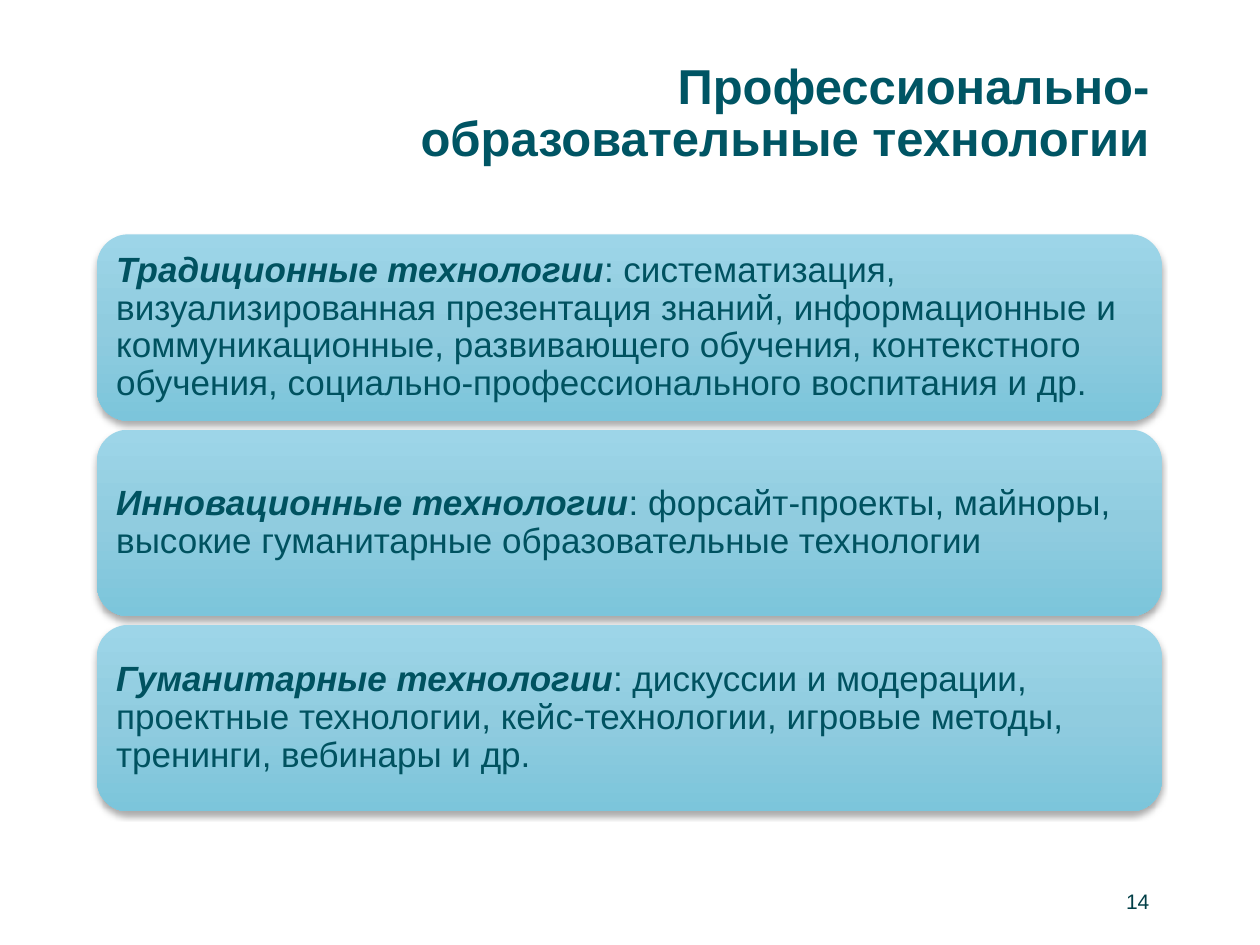
import copy

import pptx
import pptx.dml.color
import pptx.enum.shapes
import pptx.enum.text
import pptx.oxml
import pptx.oxml.ns
import pptx.util

TITLE = "Профессионально-образовательные технологии"
PAGE = "14"
CARDS = [
    ("Традиционные технологии",
     ": систематизация, визуализированная презентация знаний, информационные и "
     "коммуникационные, развивающего обучения, контекстного обучения, "
     "социально-профессионального воспитания и др."),
    ("Инновационные технологии",
     ": форсайт-проекты, майноры, высокие гуманитарные образовательные технологии"),
    ("Гуманитарные технологии",
     ": дискуссии и модерации, проектные технологии, кейс-технологии, "
     "игровые методы, тренинги, вебинары и др."),
]

COLORS = {"title": "005564", "card": "005260", "page": "023F47", "shadow": "000000"}
GRADIENT = [(0, "9DD5E8"), (0.5, "90CCDF"), (1, "7CC5DB")]

WIDTH, HEIGHT = 10, 7.5
LEFT, RIGHT = 0.77, 9.22
CARD_TOP, CARD_HEIGHT, CARD_PITCH = 1.86, 1.48, 1.55
CARD_INSET = 0.08
TITLE_LEFT, TITLE_TOP, TITLE_HEIGHT = 2.42, 0.44, 1.45
PAGE_WIDTH, PAGE_HEIGHT, PAGE_TOP = 0.55, 0.4, 6.95

ALIGN = pptx.enum.text.PP_ALIGN
ANCHOR = pptx.enum.text.MSO_ANCHOR
qn = pptx.oxml.ns.qn
SHADOW = (
    f'<a:outerShdw {pptx.oxml.ns.nsdecls("a")} blurRad="{pptx.util.Pt(3.5)}" '
    f'dist="{pptx.util.Pt(2.2)}" dir="5400000" rotWithShape="0">'
    f'<a:srgbClr val="{COLORS["shadow"]}"><a:alpha val="32000"/></a:srgbClr>'
    '</a:outerShdw>'
)


def inches(*values):
    return [pptx.util.Inches(v) for v in values]


def rgb(value):
    return pptx.dml.color.RGBColor.from_string(value)


def write(sp, runs, color, size, align, anchor, spacing=1.0):
    """Fill one paragraph with (text, font format) runs."""
    tf = sp.text_frame
    tf.word_wrap = True
    tf.vertical_anchor = anchor
    p = tf.paragraphs[0]
    p.alignment = align
    p.line_spacing = spacing
    for text, extra in runs:
        r = p.add_run()
        r.text = text
        for key, value in {"name": "Arial", "size": pptx.util.Pt(size), **extra}.items():
            setattr(r.font, key, value)
        r.font.color.rgb = rgb(COLORS[color])


def add_card(s, top):
    sp = s.shapes.add_shape(pptx.enum.shapes.MSO_SHAPE.ROUNDED_RECTANGLE,
                            *inches(LEFT, top, RIGHT - LEFT, CARD_HEIGHT))
    sp.line.fill.background()
    sp.fill.gradient()
    sp.fill.gradient_angle = 270
    spPr = sp.element.spPr
    stops = spPr.find(qn("a:gradFill")).find(qn("a:gsLst"))
    stops.insert(1, copy.deepcopy(stops[0]))
    for stop, (position, color) in zip(sp.fill.gradient_stops, GRADIENT):
        stop.position = position
        stop.color.rgb = rgb(color)
    sp.shadow.inherit = False
    spPr.find(qn("a:effectLst")).append(pptx.oxml.parse_xml(SHADOW))
    for side in ("left", "top", "right", "bottom"):
        setattr(sp.text_frame, f"margin_{side}", pptx.util.Inches(CARD_INSET))
    return sp


def main():
    prs = pptx.Presentation()
    prs.slide_width, prs.slide_height = inches(WIDTH, HEIGHT)
    s = prs.slides.add_slide(prs.slide_layouts[6])

    title = s.shapes.add_textbox(
        *inches(TITLE_LEFT, TITLE_TOP, RIGHT - TITLE_LEFT, TITLE_HEIGHT))
    write(title, [(TITLE, {"bold": True})], "title", 28, ALIGN.RIGHT, ANCHOR.TOP, 0.9)

    for i, (name, details) in enumerate(CARDS):
        card = add_card(s, CARD_TOP + i * CARD_PITCH)
        runs = [(name, {"bold": True, "italic": True}), (details, {})]
        write(card, runs, "card", 20, ALIGN.LEFT, ANCHOR.MIDDLE, 0.9)

    page = s.shapes.add_textbox(
        *inches(RIGHT - PAGE_WIDTH, PAGE_TOP, PAGE_WIDTH, PAGE_HEIGHT))
    write(page, [(PAGE, {})], "page", 12, ALIGN.RIGHT, ANCHOR.MIDDLE)

    prs.save("out.pptx")


if __name__ == "__main__":
    main()
